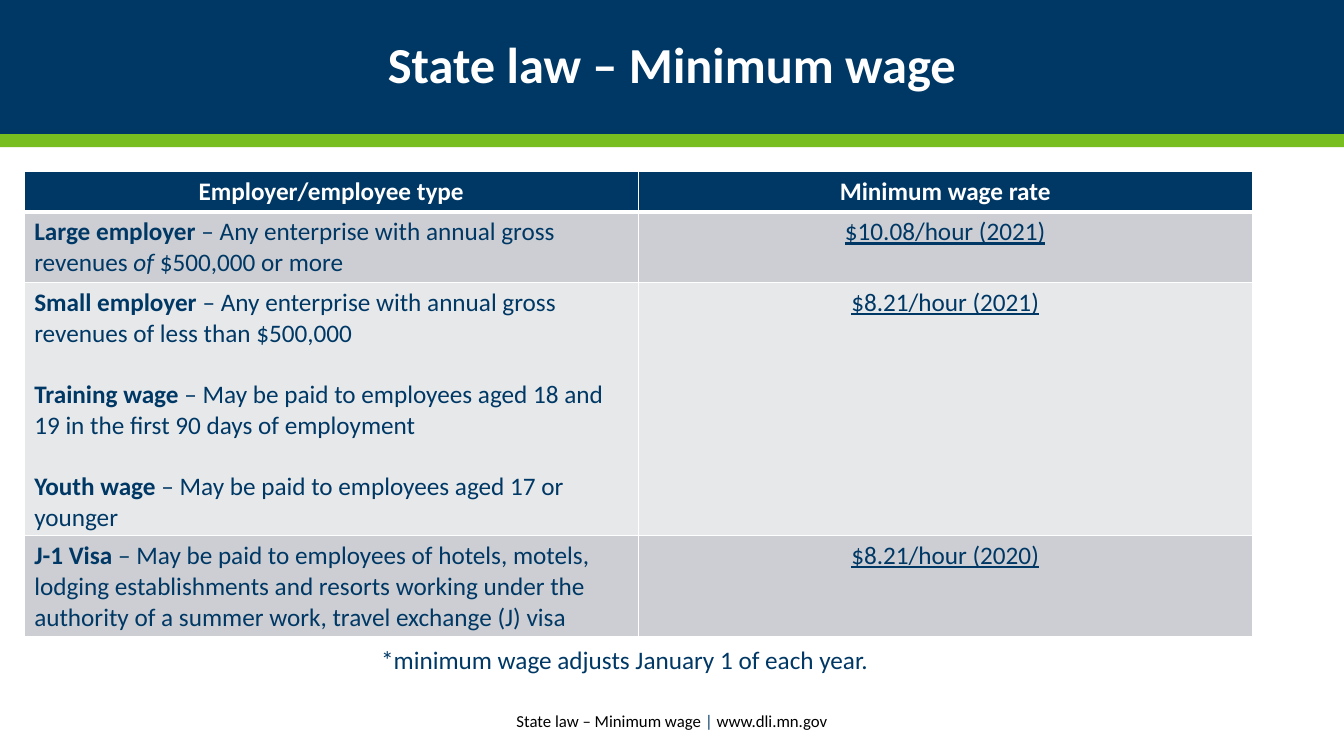
"""Builds a slide on the state minimum wage with a rate table."""
from lxml import etree
from pptx import Presentation
from pptx.dml.color import RGBColor
from pptx.enum.shapes import MSO_SHAPE
from pptx.enum.text import MSO_ANCHOR, PP_ALIGN
from pptx.oxml.ns import qn
from pptx.util import Inches, Pt

RECTANGLE = MSO_SHAPE.RECTANGLE
MIDDLE = MSO_ANCHOR.MIDDLE
LEFT, CENTER = PP_ALIGN.LEFT, PP_ALIGN.CENTER
NAVY = RGBColor(0x00, 0x38, 0x65)
GREEN = RGBColor(0x78, 0xBE, 0x21)
WHITE = RGBColor(0xFF, 0xFF, 0xFF)
BLACK = RGBColor(0x00, 0x00, 0x00)
DARK_BAND = RGBColor(0xCC, 0xCE, 0xD3)
LIGHT_BAND = RGBColor(0xE7, 0xE8, 0xEA)
FONT = "Calibri"
PAGE_WIDTH, PAGE_HEIGHT = 13.33, 7.5
BODY_SIZE = 18
BLANK_LINE = 22

HEADINGS = ["Employer/employee type", "Minimum wage rate"]
WAGES = [
    ([[("Large employer ", "b"),
       ("– Any enterprise with annual gross revenues ", ""),
       ("of", "i"),
       (" $500,000 or more", "")]],
     "$10.08/hour (2021)", 0.66, DARK_BAND),
    ([[("Small employer ", "b"),
       ("– Any enterprise with annual gross revenues of less than $500,000", "")],
      [("Training wage ", "b"),
       ("– May be paid to employees aged 18 and 19 in the first 90 days of employment", "")],
      [("Youth wage ", "b"),
       ("– May be paid to employees aged 17 or younger", "")]],
     "$8.21/hour (2021)", 2.34, LIGHT_BAND),
    ([[("J-1 Visa ", "b"),
       ("– May be paid to employees of hotels, motels, lodging establishments and resorts "
        "working under the authority of a summer work, travel exchange (J) visa", "")]],
     "$8.21/hour (2020)", 0.94, DARK_BAND),
]


def add_span(para, text, size, color, style=""):
    """Add one run; style letters b, i and u switch on bold, italic and underline."""
    span = para.add_run()
    span.text = text
    font = span.font
    font.name, font.size = FONT, Pt(size)
    font.color.rgb = color
    font.bold = "b" in style
    font.italic = "i" in style
    font.underline = "u" in style


def add_bar(page, left, top, width, height, color):
    """Add a plain filled rectangle."""
    bar = page.shapes.add_shape(
        RECTANGLE, Inches(left), Inches(top), Inches(width), Inches(height))
    bar.shadow.inherit = False
    bar.fill.solid()
    bar.fill.fore_color.rgb = color
    bar.line.fill.background()
    return bar


def add_header(page, left, top, width, height):
    """Add the title band with its green rule below."""
    add_bar(page, left, top + height, width, 0.13, GREEN)
    band = add_bar(page, left, top, width, height, NAVY)
    frame = band.text_frame
    frame.word_wrap = True
    frame.vertical_anchor = MIDDLE
    frame.margin_left = frame.margin_right = Inches(0.9)
    para = frame.paragraphs[0]
    para.alignment = CENTER
    para.line_spacing = 0.9
    add_span(para, "State law – Minimum wage", 36, WHITE, "b")


def add_centered_text(page, left, top, width, height, spans, size):
    """Add a one-line centred text box from (text, colour) spans."""
    box = page.shapes.add_textbox(Inches(left), Inches(top), Inches(width), Inches(height))
    frame = box.text_frame
    frame.word_wrap = True
    frame.vertical_anchor = MIDDLE
    para = frame.paragraphs[0]
    para.alignment = CENTER
    for text, color in spans:
        add_span(para, text, size, color)


def set_borders(cell, **widths):
    """Give the cell white borders of the named sides' widths in points."""
    properties = cell._tc.get_or_add_tcPr()
    for side, width in widths.items():
        line = etree.SubElement(properties, qn(f"a:ln{side}"), w=str(Pt(width)))
        fill = etree.SubElement(line, qn("a:solidFill"))
        etree.SubElement(fill, qn("a:srgbClr"), val=str(WHITE))


def fill_cell(cell, paragraphs, fill, color, alignment, top_border, bottom_border):
    """Fill a table cell with colour, borders and paragraphs of (text, style) spans."""
    set_borders(cell, L=1, R=1, T=top_border, B=bottom_border)
    cell.fill.solid()
    cell.fill.fore_color.rgb = fill
    frame = cell.text_frame
    for index, spans in enumerate(paragraphs):
        para = frame.add_paragraph() if index else frame.paragraphs[0]
        para.alignment = alignment
        if index:
            para.space_before = Pt(BLANK_LINE)
        for text, style in spans:
            add_span(para, text, BODY_SIZE, color, style)


def add_wage_table(page, left, top, width, height):
    """Add the table of employer types and their wage rates."""
    table = page.shapes.add_table(
        len(WAGES) + 1, len(HEADINGS),
        Inches(left), Inches(top), Inches(width), Inches(height)).table
    table.rows[0].height = Inches(0.38)
    for column, heading in enumerate(HEADINGS):
        fill_cell(table.cell(0, column), [[(heading, "b")]], NAVY, WHITE, CENTER, 1, 3)
    for row, (types, rate, row_height, band) in enumerate(WAGES, start=1):
        table.rows[row].height = Inches(row_height)
        top_border = 3 if row == 1 else 1
        fill_cell(table.cell(row, 0), types, band, NAVY, LEFT, top_border, 1)
        fill_cell(table.cell(row, 1), [[(rate, "u")]], band, NAVY, CENTER, top_border, 1)


def main():
    """Build the deck and save it."""
    deck = Presentation()
    deck.slide_width, deck.slide_height = Inches(PAGE_WIDTH), Inches(PAGE_HEIGHT)
    page = deck.slides.add_slide(deck.slide_layouts[6])
    add_header(page, 0, 0, PAGE_WIDTH, 1.33)
    add_centered_text(
        page, 3.61, 6.95, 6.11, 0.4,
        [("State law – Minimum wage ", BLACK), ("|", NAVY), (" www.dli.mn.gov", BLACK)], 12)
    add_centered_text(
        page, 2.32, 6.34, 7.75, 0.4,
        [("*minimum wage adjusts January 1 of each year.", NAVY)], BODY_SIZE)
    add_wage_table(page, 0.24, 1.7, 12.18, 4.6)
    deck.save("out.pptx")


if __name__ == "__main__":
    main()
